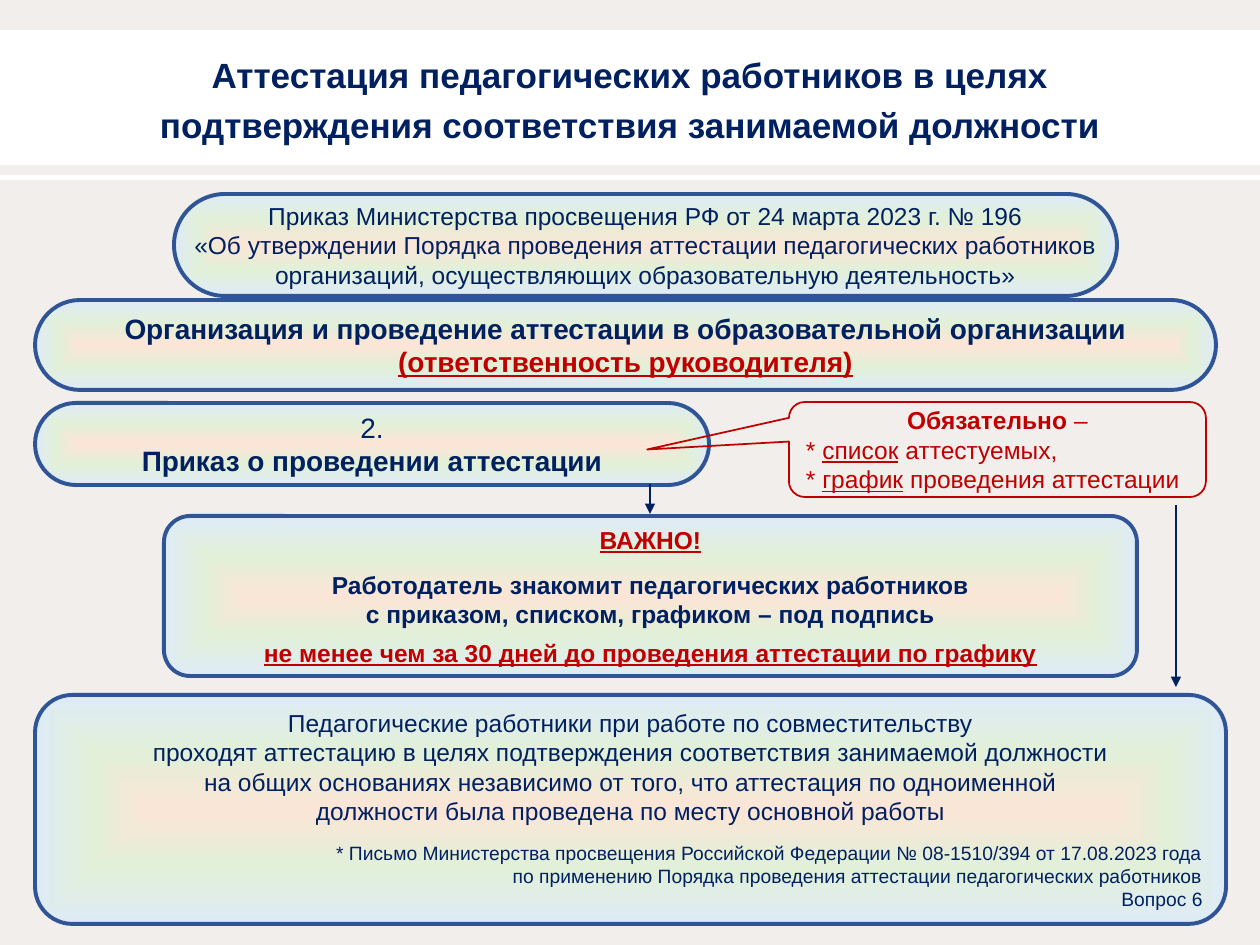
from lxml import etree
from pptx import Presentation
from pptx.dml.color import RGBColor
from pptx.enum.shapes import MSO_CONNECTOR, MSO_SHAPE
from pptx.enum.text import MSO_ANCHOR, PP_ALIGN
from pptx.oxml import parse_xml
from pptx.oxml.ns import nsdecls, qn
from pptx.util import Emu, Pt

LEFT, CENTER, RIGHT = PP_ALIGN.LEFT, PP_ALIGN.CENTER, PP_ALIGN.RIGHT
MIDDLE = MSO_ANCHOR.MIDDLE
RECT, ROUNDED = MSO_SHAPE.RECTANGLE, MSO_SHAPE.ROUNDED_RECTANGLE
CALLOUT = MSO_SHAPE.ROUNDED_RECTANGULAR_CALLOUT
STRAIGHT = MSO_CONNECTOR.STRAIGHT

PX = 914400 / 126
NAVY, RED, BLUE, WHITE, PAPER = "002060", "C00000", "2F5597", "FFFFFF", "F1EEEB"
STOPS = [(0, "FBE5D6"), (50, "E2F0D9"), (100, "DEEBF7")]

BOLD = {"bold": True}
UNDERLINED = {"underline": True}
WARNING = {"bold": True, "underline": True, "color": RED}


def px(length):
    return Emu(round(length * PX))


def rgb(value):
    return RGBColor.from_string(value)


def paragraph(*spans, align=CENTER, **spacing):
    """Each span is a string or a (string, format) pair."""
    return spans, align, spacing


def write(shape, paragraphs, size, color=NAVY, wrap=False):
    frame = shape.text_frame
    frame.word_wrap = wrap
    frame.vertical_anchor = MIDDLE
    for index, (spans, align, spacing) in enumerate(paragraphs):
        para = frame.paragraphs[0] if index == 0 else frame.add_paragraph()
        para.alignment = align
        for name, value in spacing.items():
            setattr(para, name, value)
        for item in spans:
            text, style = (item, {}) if isinstance(item, str) else item
            span = para.add_run()
            span.text = text
            values = {"name": "Arial", "size": Pt(size), "color": color, **style}
            span.font.color.rgb = rgb(values.pop("color"))
            for name, value in values.items():
                setattr(span.font, name, value)


def add_box(page, kind, box, fill=None, line=None, weight=1, adjust=()):
    shape = page.shapes.add_shape(kind, *map(px, box))
    shape.shadow.inherit = False
    for index, value in enumerate(adjust):
        shape.adjustments[index] = value
    if fill:
        shape.fill.solid()
        shape.fill.fore_color.rgb = rgb(fill)
    else:
        shape.fill.background()
    if line:
        shape.line.color.rgb = rgb(line)
        shape.line.width = Pt(weight)
    else:
        shape.line.fill.background()
    return shape


def add_panel(page, box, paragraphs, size, corner=0.5):
    """Rounded panel with a gradient spreading from its centre."""
    shape = add_box(page, ROUNDED, box, PAPER, BLUE, 2.25, [corner])
    stops = "".join(
        f'<a:gs pos="{place * 1000}"><a:srgbClr val="{color}"/></a:gs>'
        for place, color in STOPS
    )
    gradient = parse_xml(
        f'<a:gradFill {nsdecls("a")} rotWithShape="1"><a:gsLst>{stops}</a:gsLst>'
        '<a:path path="shape"><a:fillToRect l="50000" t="50000" r="50000" b="50000"/>'
        "</a:path></a:gradFill>"
    )
    properties = shape.element.spPr
    properties.replace(properties.find(qn("a:solidFill")), gradient)
    write(shape, paragraphs, size)


def add_arrow(page, x, top, bottom):
    arrow = page.shapes.add_connector(STRAIGHT, px(x), px(top), px(x), px(bottom))
    arrow.line.color.rgb = rgb(NAVY)
    arrow.line.width = Pt(1.5)
    etree.SubElement(arrow.line._get_or_add_ln(), qn("a:tailEnd"), type="triangle")
    etree.SubElement(arrow.element.spPr, qn("a:effectLst"))


def add_header(page, box):
    left, top, width, height = box
    add_box(page, RECT, box, WHITE)
    title = page.shapes.add_textbox(*map(px, (left, top, width, height - 5)))
    write(title, [
        paragraph(("Аттестация педагогических работников в целях", BOLD), line_spacing=1.2),
        paragraph(("подтверждения соответствия занимаемой должности", BOLD), line_spacing=1.2),
    ], 20, wrap=True)
    add_box(page, RECT, (left, top + height + 10, width, 5), WHITE)


def add_callout(page, box):
    shape = add_box(page, CALLOUT, box, line=RED, adjust=[-0.84, 0, 0.167])
    write(shape, [
        paragraph(("Обязательно", BOLD), " –"),
        paragraph("* ", ("список", UNDERLINED), " аттестуемых,", align=LEFT),
        paragraph("* ", ("график", UNDERLINED), " проведения аттестации", align=LEFT),
    ], 14, RED, wrap=True)


def add_panels(page):
    # Stage heading
    add_panel(page, (35, 300, 1181, 90), [
        paragraph(("Организация и проведение аттестации в образовательной организации", BOLD)),
        paragraph(("(ответственность руководителя)", WARNING)),
    ], 16)
    # Step two
    add_panel(page, (35, 403, 674, 82), [
        paragraph("2."),
        paragraph(("Приказ о проведении аттестации", BOLD)),
    ], 16)
    # Notice period
    add_panel(page, (164, 516, 973, 160), [
        paragraph(("ВАЖНО!", WARNING)),
        paragraph(("Работодатель знакомит педагогических работников", BOLD), space_before=Pt(9)),
        paragraph(("с приказом, списком, графиком – под подпись", BOLD)),
        paragraph(("не менее чем за 30 дней до проведения аттестации по графику", WARNING),
                  space_before=Pt(5)),
    ], 14, 0.163)
    # Governing order
    add_panel(page, (174, 194, 943, 102), [
        paragraph("Приказ Министерства просвещения РФ от 24 марта 2023 г. № 196"),
        paragraph("«Об утверждении Порядка проведения аттестации педагогических работников"),
        paragraph("организаций, осуществляющих образовательную деятельность»"),
    ], 14)
    # Part-time staff and the source letter
    small = {"size": Pt(11)}
    add_panel(page, (35, 695, 1191, 229), [
        paragraph("Педагогические работники при работе по совместительству"),
        paragraph("проходят аттестацию в целях подтверждения соответствия занимаемой должности"),
        paragraph("на общих основаниях независимо от того, что аттестация по одноименной"),
        paragraph("должности была проведена по месту основной работы"),
        paragraph(("* Письмо Министерства просвещения Российской Федерации "
                   "№ 08-1510/394 от 17.08.2023 года", small),
                  align=RIGHT, space_before=Pt(9)),
        paragraph(("по применению Порядка проведения аттестации педагогических работников", small),
                  align=RIGHT),
        paragraph(("Вопрос 6", small), align=RIGHT),
    ], 14, 0.163)


def main():
    deck = Presentation()
    deck.slide_width, deck.slide_height = px(1260), px(945)
    page = deck.slides.add_slide(deck.slide_layouts[6])
    page.background.fill.solid()
    page.background.fill.fore_color.rgb = rgb(PAPER)

    add_header(page, (0, 30, 1260, 135))
    add_panels(page)
    add_callout(page, (789, 402, 417, 95))
    add_arrow(page, 650, 484, 514)
    add_arrow(page, 1176, 505, 687)
    deck.save("out.pptx")


if __name__ == "__main__":
    main()
